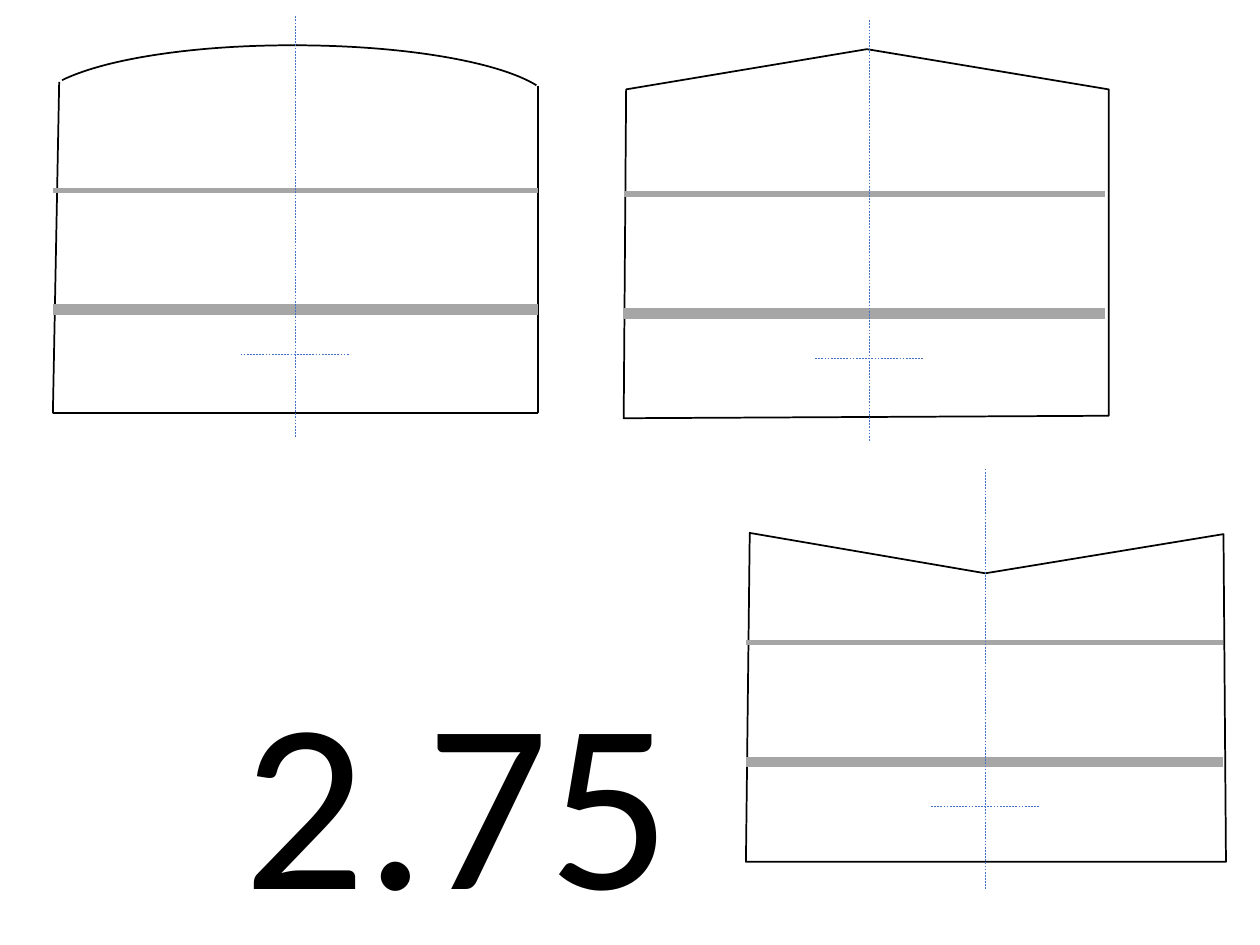
from dataclasses import dataclass
from itertools import pairwise

from pptx import Presentation
from pptx.dml.color import RGBColor
from pptx.enum import dml, shapes, text
from pptx.oxml import ns, xmlchemy
from pptx.util import Pt


@dataclass(frozen=True)
class Theme:
    paper: RGBColor = RGBColor(0xFF, 0xFF, 0xFF)
    ink: RGBColor = RGBColor(0, 0, 0)
    band: RGBColor = RGBColor(0xA6, 0xA6, 0xA6)
    guide: RGBColor = RGBColor(0x44, 0x72, 0xC4)
    font: str = "Calibri"
    figure_size: float = 138
    outline_width: float = 1
    thin_band: float = 3
    thick_band: float = 6
    guide_width: float = 0.25


@dataclass(frozen=True)
class Box:
    left: float
    top: float
    width: float
    height: float


THEME = Theme()
PANEL_HEIGHT = 240.5
THIN_BAND_Y, THICK_BAND_Y, CROSS_Y = 99.4, 167.5, 193
CROSS_HALF = 31


def set_values(target, values):
    for name, value in values.items():
        setattr(target, name, value)


def style_line(line, color, width, dash=None):
    line.color.rgb = color
    set_values(line, {"width": Pt(width), "dash_style": dash})


def style_outline(shape):
    shape.shadow.inherit = False
    shape.fill.solid()
    shape.fill.fore_color.rgb = THEME.paper
    style_line(shape.line, THEME.ink, THEME.outline_width)


def add_line(page, box, start, end, color, width, dash=None):
    """Draw a line between two points measured from the box corner."""
    ends = [Pt(value) for x, y in (start, end)
            for value in (box.left + x, box.top + y)]
    line = page.shapes.add_connector(shapes.MSO_CONNECTOR.STRAIGHT, *ends)
    style_line(line.line, color, width, dash)
    line._element.spPr.append(xmlchemy.OxmlElement("a:effectLst"))


def add_outline(page, box, points):
    """Draw a closed profile from points measured from the box corner."""
    corners = [(Pt(box.left + x), Pt(box.top + y)) for x, y in points]
    builder = page.shapes.build_freeform(*corners[0], scale=1.0)
    builder.add_line_segments(corners[1:], close=True)
    style_outline(builder.convert_to_shape())


def add_arc(page, box, left, width, angles, flipped):
    arc = page.shapes.add_shape(
        shapes.MSO_SHAPE.ARC,
        Pt(box.left + left), Pt(box.top + 16.56), Pt(width), Pt(72))
    for index, degrees in enumerate(angles):
        arc.adjustments[index] = degrees * 0.6
    if flipped:
        arc._element.spPr.find(ns.qn("a:xfrm")).set("flipH", "1")
    style_outline(arc)


def add_arched_outline(page, box):
    add_arc(page, box, -10.8, 297.4, (270.63, 354.57), False)
    add_arc(page, box, -10.08, 292.3, (264.68, 353.01), True)
    walls = [(3.6, 37.44), (0, 226.8), (box.width, 226.8), (box.width, 39.6)]
    for start, end in pairwise(walls):
        add_line(page, box, start, end, THEME.ink, THEME.outline_width)


def add_guides(page, box, axis_x):
    """Draw the two bands, the centre axis and its cross mark."""
    for y, width in ((THIN_BAND_Y, THEME.thin_band),
                     (THICK_BAND_Y, THEME.thick_band)):
        add_line(page, box, (0, y), (box.width, y), THEME.band, width)
    axis = (axis_x, 0), (axis_x, box.height)
    cross = (axis_x - CROSS_HALF, CROSS_Y), (axis_x + CROSS_HALF, CROSS_Y)
    for start, end in (axis, cross):
        add_line(page, box, start, end, THEME.guide, THEME.guide_width,
                 dml.MSO_LINE.DASH)


def add_arched_panel(page, box):
    add_arched_outline(page, box)
    add_guides(page, box, 138.24)


def add_peaked_panel(page, box):
    add_outline(page, box, [(0, 227.5), (277.2, 226.1), (277.2, 39.6),
                            (139, 16.6), (1.4, 39.6)])
    add_guides(page, box, 140.4)


def add_valley_panel(page, box):
    add_outline(page, box, [(0, 224.6), (2.2, 36.7), (136.8, 59.8),
                            (272.9, 37.4), (274.3, 224.6)])
    add_guides(page, box, 136.8)


def add_figure(page, box, wording):
    frame = page.shapes.add_textbox(
        Pt(box.left), Pt(box.top), Pt(box.width), Pt(box.height)).text_frame
    set_values(frame, {"word_wrap": False,
                       "auto_size": text.MSO_AUTO_SIZE.SHAPE_TO_FIT_TEXT})
    para = frame.paragraphs[0]
    para.alignment = text.PP_ALIGN.CENTER
    span = para.add_run()
    span.text = wording
    set_values(span.font, {"name": THEME.font, "size": Pt(THEME.figure_size)})
    span.font.color.rgb = THEME.ink


def main():
    deck = Presentation()
    set_values(deck, {"slide_width": Pt(720), "slide_height": Pt(540)})
    page = deck.slides.add_slide(deck.slide_layouts[6])
    add_arched_panel(page, Box(30.24, 9.36, 277.2, PANEL_HEIGHT))
    add_figure(page, Box(130.32, 366.48, 262.08, 174.24), "2.75")
    add_peaked_panel(page, Box(356.4, 11.52, 275, PANEL_HEIGHT))
    add_valley_panel(page, Box(426.24, 267.84, 272.9, PANEL_HEIGHT))
    deck.save("out.pptx")


if __name__ == "__main__":
    main()
